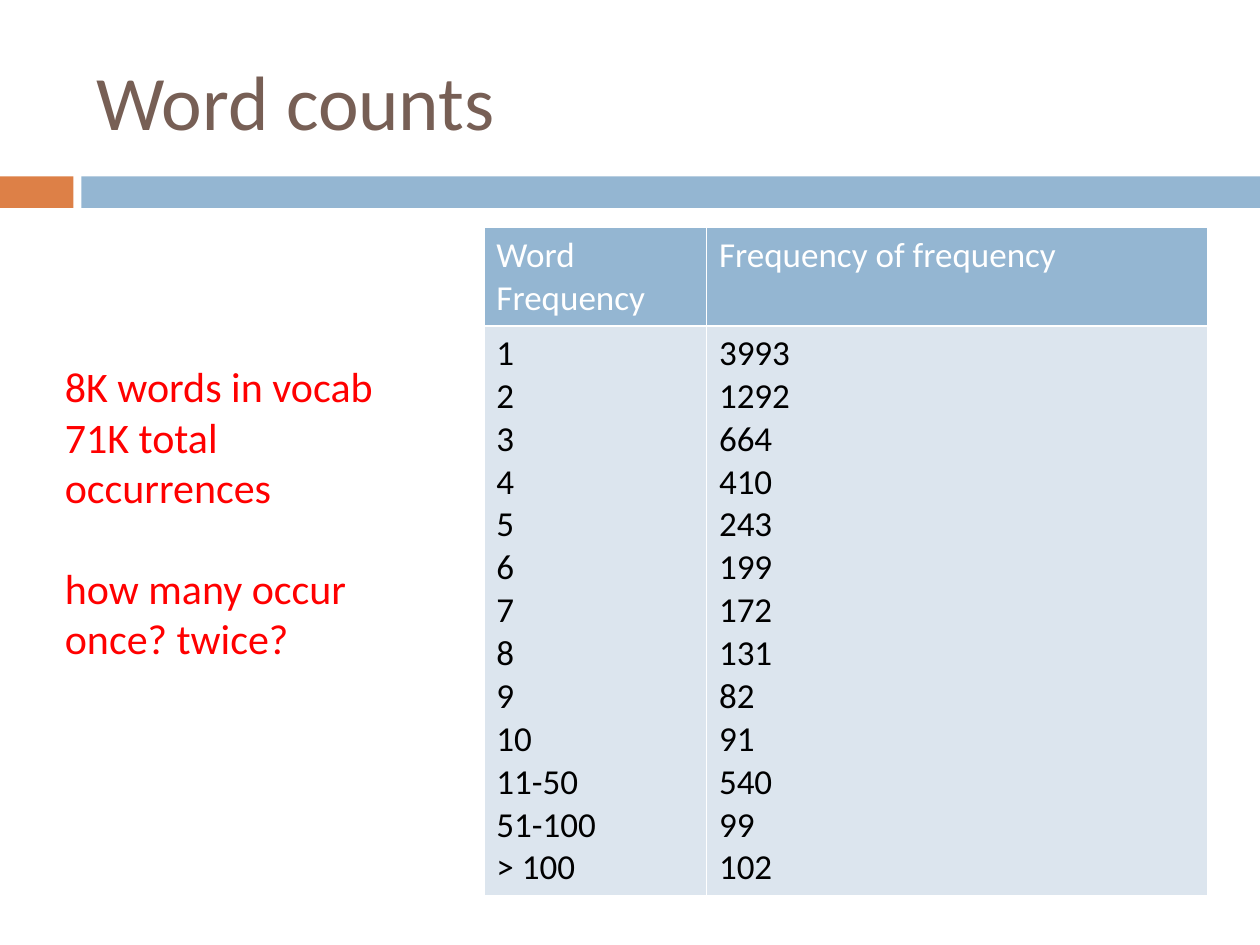
from lxml import etree
from pptx import Presentation
from pptx import util as u
from pptx.dml.color import RGBColor
from pptx.enum import shapes, text
from pptx.oxml import ns

BLUE, ORANGE, BROWN, PALE = "94B6D2", "DD8047", "775F55", "DCE5EE"
WHITE, BLACK, RED = "FFFFFF", "000000", "FF0000"

COUNTS = [
    ("1", "3993"), ("2", "1292"), ("3", "664"), ("4", "410"), ("5", "243"),
    ("6", "199"), ("7", "172"), ("8", "131"), ("9", "82"), ("10", "91"),
    ("11-50", "540"), ("51-100", "99"), ("> 100", "102"),
]


def paint(target, color):
    target.solid()
    target.fore_color.rgb = RGBColor.from_string(color)


class Deck:
    font = "Calibri"

    def __init__(self, prs):
        self.s = prs.slides.add_slide(prs.slide_layouts[5])

    def add_lines(self, tf, lines, size, color):
        for i, line in enumerate(lines):
            p = tf.paragraphs[0] if i == 0 else tf.add_paragraph()
            p.alignment = text.PP_ALIGN.LEFT
            r = p.add_run()
            r.text = line
            r.font.name = self.font
            r.font.size = u.Pt(size)
            r.font.bold = False
            r.font.color.rgb = RGBColor.from_string(color)

    def bar(self, x, y, w, h, color):
        sp = self.s.shapes.add_shape(shapes.MSO_SHAPE.RECTANGLE, *map(u.Pt, (x, y, w, h)))
        sp.shadow.inherit = False
        paint(sp.fill, color)
        sp.line.fill.background()

    def title(self, x, y, w, h, line):
        sp = self.s.shapes.title
        sp.left, sp.top, sp.width, sp.height = map(u.Pt, (x, y, w, h))
        sp.text_frame.vertical_anchor = text.MSO_ANCHOR.MIDDLE
        self.add_lines(sp.text_frame, [line], 44, BROWN)

    def note(self, x, y, w, h, lines):
        tf = self.s.shapes.add_textbox(*map(u.Pt, (x, y, w, h))).text_frame
        tf.word_wrap = True
        tf.auto_size = text.MSO_AUTO_SIZE.SHAPE_TO_FIT_TEXT
        self.add_lines(tf, lines, 24, RED)
        return tf

    def borders(self, cell, color, width):
        pr = cell._tc.get_or_add_tcPr()
        for i, side in enumerate(("lnL", "lnR", "lnT", "lnB")):
            ln = etree.Element(ns.qn(f"a:{side}"), w=str(u.Pt(width)))
            fill = etree.SubElement(ln, ns.qn("a:solidFill"))
            etree.SubElement(fill, ns.qn("a:srgbClr"), val=color)
            pr.insert(i, ln)

    def table(self, x, y, widths, heights, rows, styles):
        box = map(u.Pt, (x, y, sum(widths), sum(heights)))
        table = self.s.shapes.add_table(len(rows), len(widths), *box).table
        for col, width in zip(table.columns, widths):
            col.width = u.Pt(width)
        for row, height, cells, (fill, color) in zip(table.rows, heights, rows, styles):
            row.height = u.Pt(height)
            for cell, lines in zip(row.cells, cells):
                paint(cell.fill, fill)
                self.borders(cell, WHITE, 1)
                self.add_lines(cell.text_frame, lines, 20, color)


def main():
    prs = Presentation()
    prs.slide_width, prs.slide_height = u.Pt(720), u.Pt(540)
    deck = Deck(prs)
    deck.bar(0, 100.8, 42, 18, ORANGE)
    deck.bar(46.5, 100.8, 673.5, 18, BLUE)
    deck.title(48, 18, 642, 78, "Word counts")
    header = [["Word Frequency"], ["Frequency of frequency"]]
    deck.table(276.5, 130, (127.2, 286.5), (55.5, 325), (header, zip(*COUNTS)),
               ((BLUE, WHITE), (PALE, BLACK)))
    tf = deck.note(30, 202.5, 216, 181.5, [
        "8K words in vocab", "71K total occurrences", "how many occur once? twice?"])
    tf.paragraphs[-1].space_before = u.Pt(29)
    prs.save("out.pptx")


if __name__ == "__main__":
    main()
